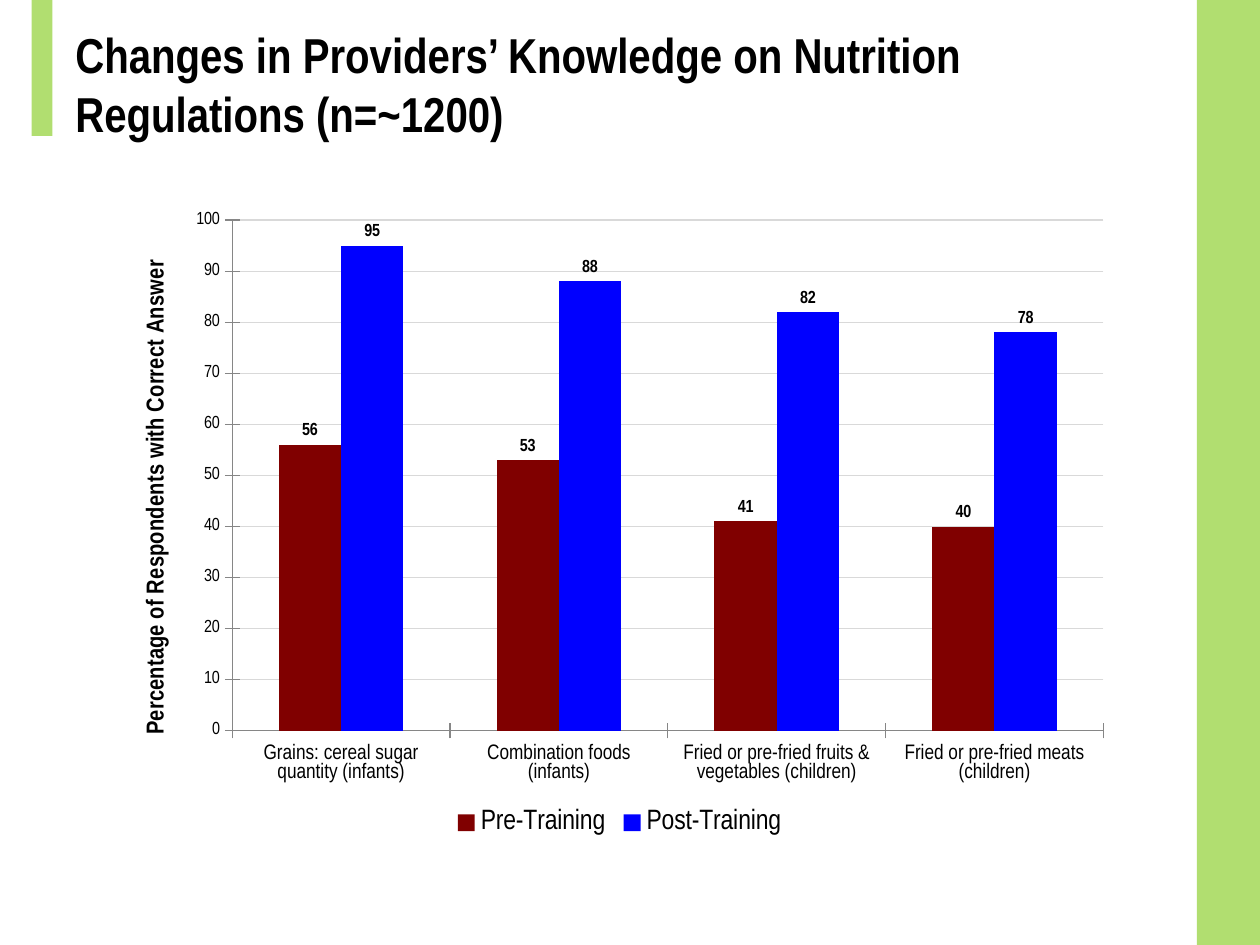
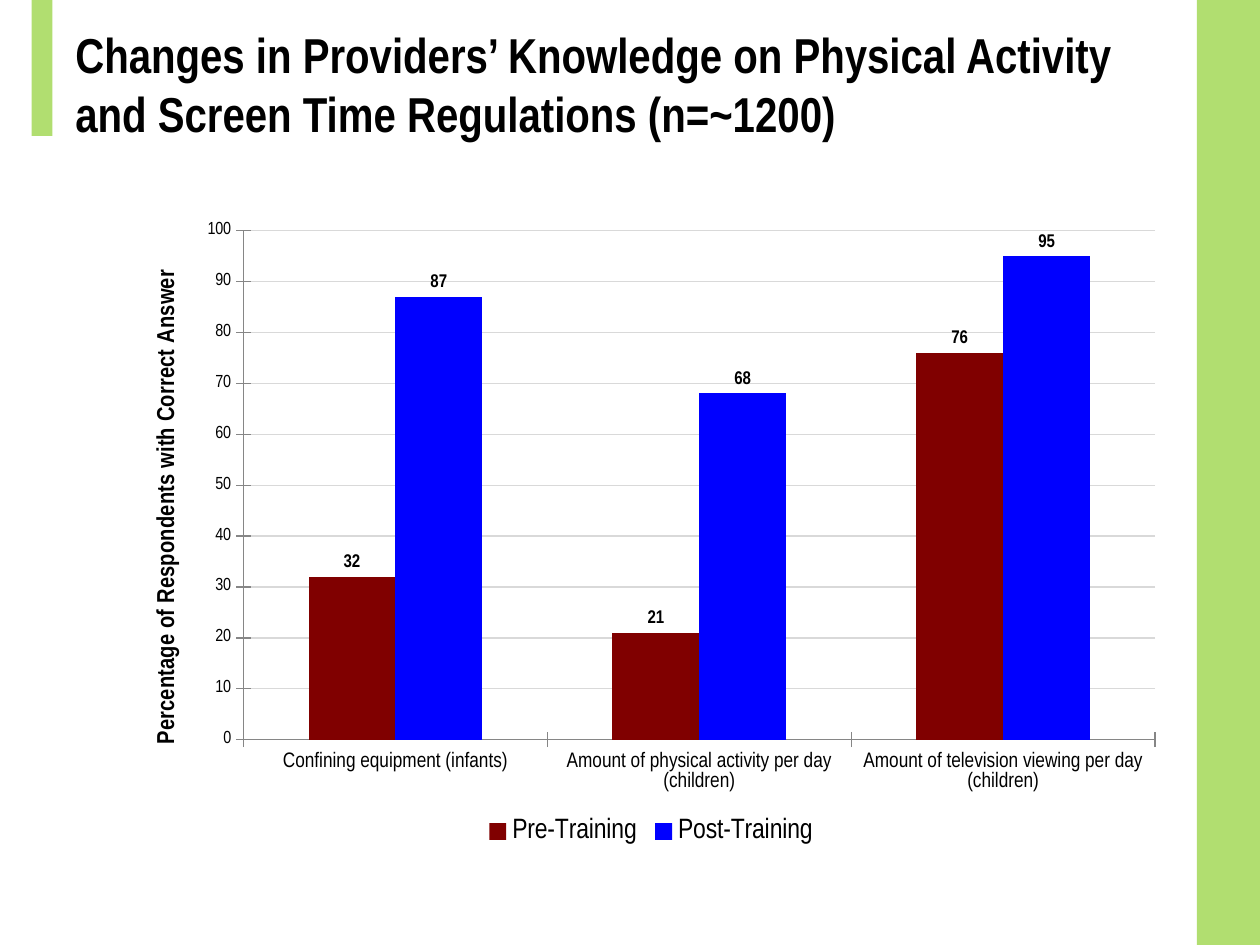
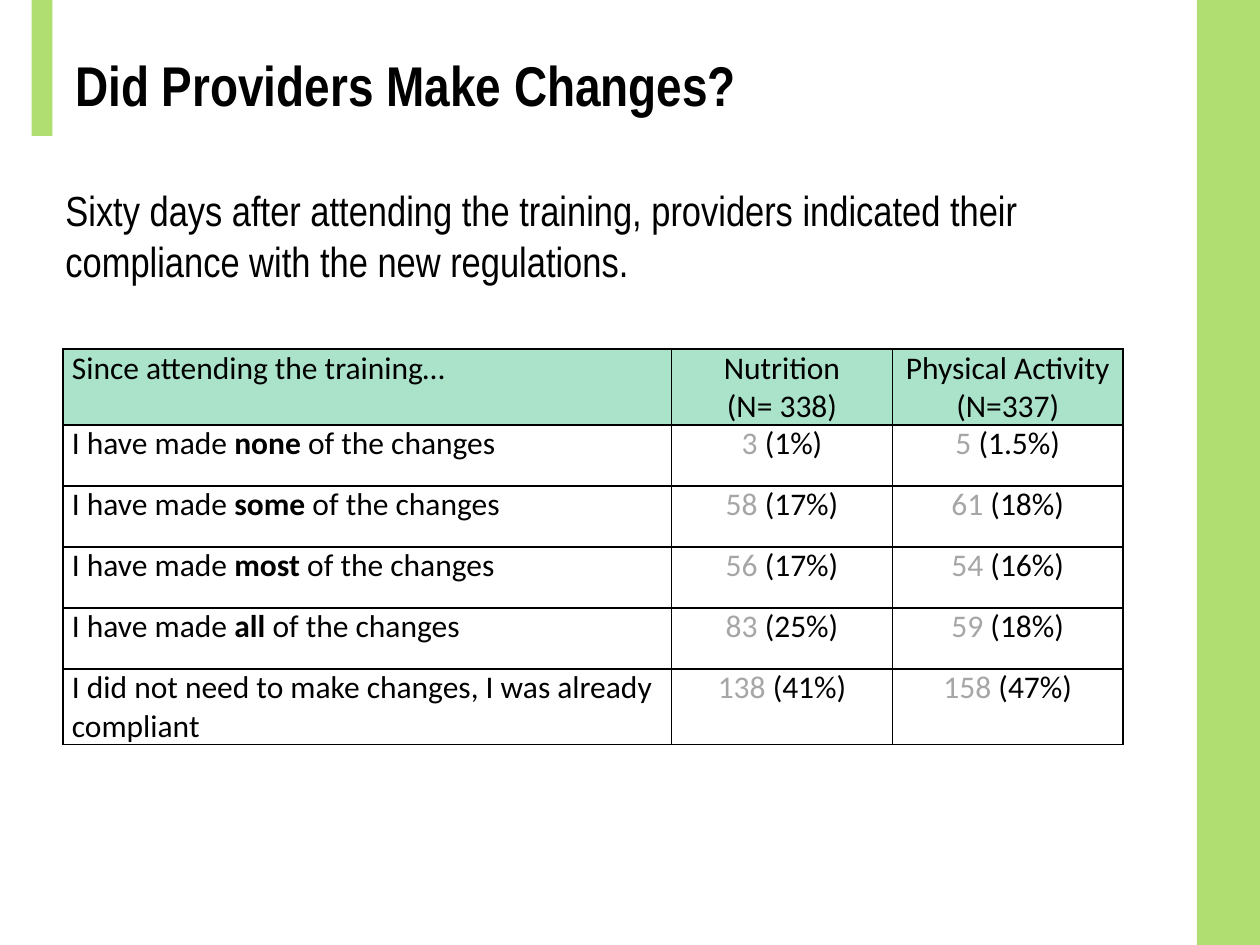
from lxml.etree import SubElement
from pptx import Presentation
from pptx.chart.data import CategoryChartData
from pptx.dml.color import RGBColor
from pptx.enum.chart import XL_CHART_TYPE as ChartType, XL_LABEL_POSITION as LabelPos
from pptx.enum.chart import XL_LEGEND_POSITION as LegendPos, XL_TICK_MARK as Tick
from pptx.enum.shapes import MSO_SHAPE as Shape
from pptx.enum.text import MSO_ANCHOR as Anchor, PP_ALIGN as Align
from pptx.oxml.ns import qn
from pptx.util import Cm, Pt

# Content
CHART_SLIDES = [
    {"title": "Changes in Providers’ Knowledge on Nutrition Regulations (n=~1200)",
     "box": (2.33, 4.02, 20.32, 12.93), "label_size": 10,
     "cats": ["Grains: cereal sugar quantity (infants)", "Combination foods (infants)",
              "Fried or pre-fried fruits & vegetables (children)",
              "Fried or pre-fried meats (children)"],
     "pre": [56, 53, 41, 40], "post": [95, 88, 82, 78]},
    {"title": "Changes in Providers’ Knowledge on Physical Activity and "
              "Screen Time Regulations (n=~1200)",
     "box": (2.54, 4.23, 21.17, 12.9), "label_size": 10.5,
     "cats": ["Confining equipment (infants)",
              "Amount of physical activity per day (children)",
              "Amount of television viewing per day (children)"],
     "pre": [32, 21, 76], "post": [87, 68, 95]},
]
SERIES = [("Pre-Training", "pre", "800000"), ("Post-Training", "post", "0000FF")]
VALUE_TITLE = "Percentage of Respondents with Correct Answer"

CHANGES_TITLE = "Did Providers Make Changes?"
CHANGES_INTRO = ("Sixty days after attending the training, providers indicated their "
                 "compliance with the new regulations.")
TABLE_HEAD = [["Since attending the training…"], ["Nutrition", "(N= 338)"],
              ["Physical Activity", "(N=337)"]]
MADE = "I have made "
OF_CHANGES = "of the changes"
# Each answer: (before, bold word, after), then (count, share) per topic
TABLE_ROWS = [
    ((MADE, "none ", OF_CHANGES), ("3", "1%"), ("5", "1.5%")),
    ((MADE, "some ", OF_CHANGES), ("58", "17%"), ("61", "18%")),
    ((MADE, "most ", OF_CHANGES), ("56", "17%"), ("54", "16%")),
    ((MADE, "all ", OF_CHANGES), ("83", "25%"), ("59", "18%")),
    (("I did not need to make changes, I was already compliant",),
     ("138", "41%"), ("158", "47%")),
]

# Shared style
NARROW, BODY = "Arial Narrow", "Calibri"
BLACK, GREEN, MINT, GREY = "000000", "B1DE70", "AAE2CA", "A6A6A6"
GRID, AXIS = "D9D9D9", "868686"
BANDS = [(24.13, 0, 1.27, 19.05), (0.64, 0, 0.42, 2.74)]
TITLE_BOX = (1.27, -0.43, 22.43, 4.24)
INTRO_BOX = (1.07, 3.6, 21.8, 2.31)
TABLE_POS, COL_WIDTHS, ROW_HEIGHT = (1.27, 7.04), (12.27, 4.45, 4.65), 1.23


def rgb(color):
    return RGBColor.from_string(color)


def cms(values):
    return [Cm(v) for v in values]


def set_font(font, size, color=BLACK, name=NARROW, bold=False):
    for key, value in {"size": Pt(size), "name": name, "bold": bold}.items():
        setattr(font, key, value)
    font.color.rgb = rgb(color)


def set_line(line, color):
    line.color.rgb = rgb(color)
    line.width = Pt(0.75)


def add_text(s, text, box, size, bold=False, anchor=Anchor.TOP):
    tf = s.shapes.add_textbox(*cms(box)).text_frame
    tf.word_wrap = True
    tf.vertical_anchor = anchor
    r = tf.paragraphs[0].add_run()
    r.text = text
    set_font(r.font, size, bold=bold)


def add_slide(prs, title, size):
    s = prs.slides.add_slide(prs.slide_layouts[6])
    for box in BANDS:
        band = s.shapes.add_shape(Shape.RECTANGLE, *cms(box))
        band.shadow.inherit = False
        band.fill.solid()
        band.fill.fore_color.rgb = rgb(GREEN)
        band.line.fill.background()
    add_text(s, title, TITLE_BOX, size, True, Anchor.MIDDLE)
    return s


def add_knowledge_chart(s, content):
    data = CategoryChartData()
    data.categories = content["cats"]
    for name, key, _ in SERIES:
        data.add_series(name, content[key])
    chart = s.shapes.add_chart(ChartType.COLUMN_CLUSTERED, *cms(content["box"]), data).chart
    set_font(chart.font, 10)
    chart.has_title = False

    # Legend
    chart.has_legend = True
    chart.legend.position = LegendPos.BOTTOM
    chart.legend.include_in_layout = False
    set_font(chart.legend.font, 16)

    # Axes
    cat_axis, val_axis = chart.category_axis, chart.value_axis
    for axis, size in ((cat_axis, 12), (val_axis, 10)):
        axis.major_tick_mark = Tick.CROSS
        set_line(axis.format.line, AXIS)
        set_font(axis.tick_labels.font, size)
    for key, value in {"minimum_scale": 0, "maximum_scale": 100, "major_unit": 10}.items():
        setattr(val_axis, key, value)
    set_line(val_axis.major_gridlines.format.line, GRID)
    r = val_axis.axis_title.text_frame.paragraphs[0].add_run()
    r.text = VALUE_TITLE
    set_font(r.font, 14, bold=True)

    # Columns and their values
    plot = chart.plots[0]
    plot.gap_width, plot.overlap, plot.vary_by_categories = 150, 0, False
    for series, (_, _, color) in zip(plot.series, SERIES):
        series.format.fill.solid()
        series.format.fill.fore_color.rgb = rgb(color)
        labels = series.data_labels
        labels.show_value = True
        labels.position = LabelPos.OUTSIDE_END
        set_font(labels.font, content["label_size"], bold=True)


def add_borders(cell):
    tc_pr = cell._tc.get_or_add_tcPr()
    for side in ("a:lnL", "a:lnR", "a:lnT", "a:lnB"):
        ln = SubElement(tc_pr, qn(side), w=str(Pt(1)))
        SubElement(SubElement(ln, qn("a:solidFill")), qn("a:srgbClr"), val=BLACK)


def fill_cell(cell, paragraphs, align, space=0, fill=None):
    """Each paragraph is a list of (text, color, bold) runs."""
    cell.margin_left = cell.margin_right = Cm(0.18)
    cell.margin_top = cell.margin_bottom = 0
    add_borders(cell)
    if fill:
        cell.fill.solid()
        cell.fill.fore_color.rgb = rgb(fill)
    else:
        cell.fill.background()
    tf = cell.text_frame
    for i, runs in enumerate(paragraphs):
        p = tf.add_paragraph() if i else tf.paragraphs[0]
        p.alignment = align
        p.space_before = p.space_after = Pt(space)
        for text, color, bold in runs:
            r = p.add_run()
            r.text = text
            set_font(r.font, 18, color, BODY, bold)


def add_changes_table(s):
    n_rows = len(TABLE_ROWS) + 1
    size = (sum(COL_WIDTHS), ROW_HEIGHT * n_rows)
    table = s.shapes.add_table(n_rows, len(COL_WIDTHS), *cms(TABLE_POS + size)).table
    table.first_row = table.horz_banding = False
    for col, width in zip(table.columns, COL_WIDTHS):
        col.width = Cm(width)
    for row in table.rows:
        row.height = Cm(ROW_HEIGHT)

    for j, lines in enumerate(TABLE_HEAD):
        fill_cell(table.cell(0, j), [[(line, BLACK, False)] for line in lines],
                  Align.CENTER if j else Align.LEFT, fill=MINT)
    for i, (answer, *results) in enumerate(TABLE_ROWS, 1):
        runs = [(text, BLACK, k == 1) for k, text in enumerate(answer)]
        fill_cell(table.cell(i, 0), [runs], Align.LEFT, 1)
        for j, (count, share) in enumerate(results, 1):
            runs = [(count, GREY, False), (f" ({share})", BLACK, False)]
            fill_cell(table.cell(i, j), [runs], Align.CENTER, 1)


def main():
    prs = Presentation()
    prs.slide_width, prs.slide_height = Cm(25.4), Cm(19.05)

    # Knowledge charts
    for content in CHART_SLIDES:
        add_knowledge_chart(add_slide(prs, content["title"], 28), content)

    # Changes table
    s = add_slide(prs, CHANGES_TITLE, 32)
    add_changes_table(s)
    add_text(s, CHANGES_INTRO, INTRO_BOX, 24)

    prs.save("out.pptx")


if __name__ == "__main__":
    main()
